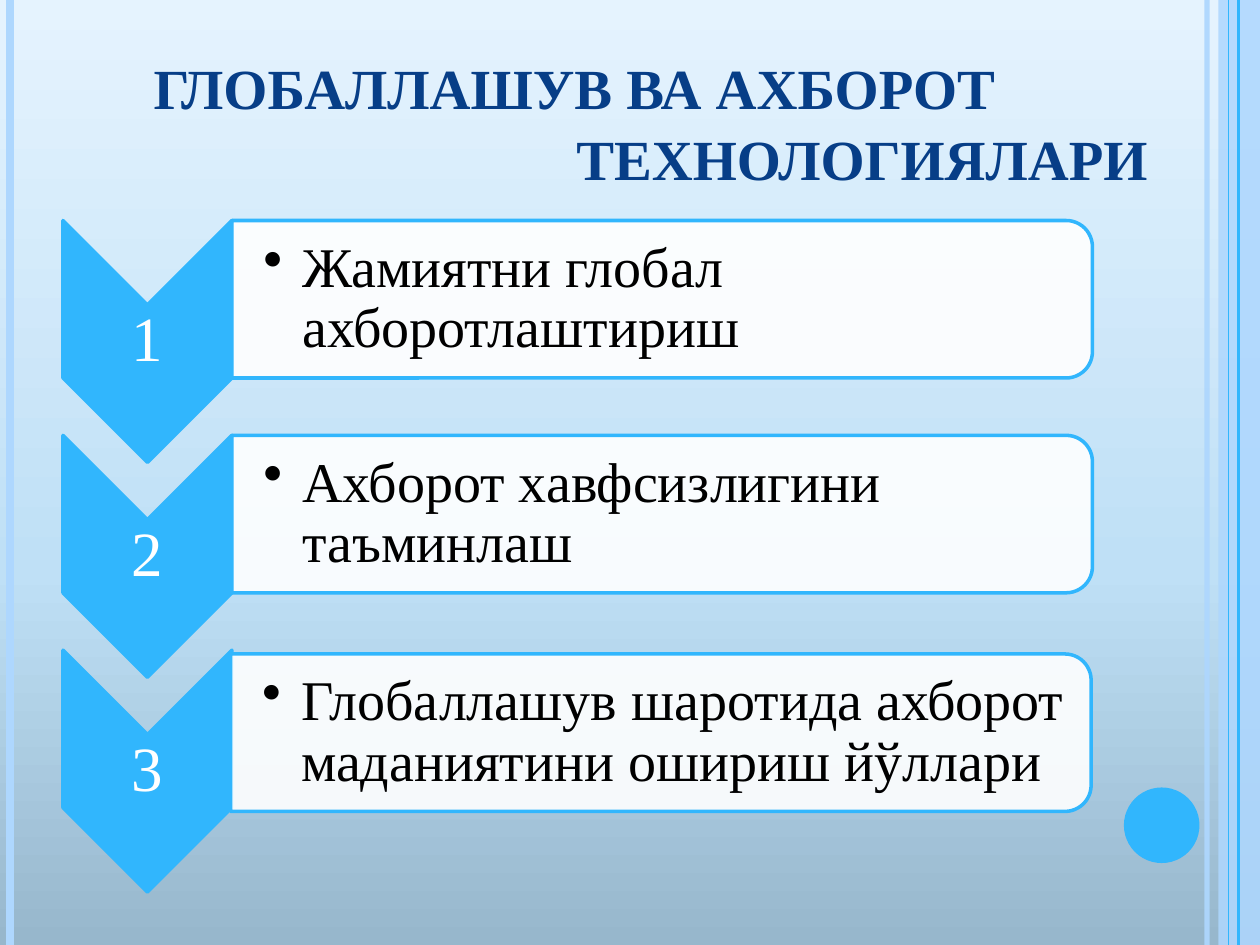
from lxml import etree
from pptx import Presentation
from pptx.dml.color import RGBColor
from pptx.enum.shapes import MSO_CONNECTOR, MSO_SHAPE
from pptx.enum.text import MSO_ANCHOR, PP_ALIGN
from pptx.oxml import parse_xml
from pptx.oxml.ns import nsdecls, qn
from pptx.util import Inches, Pt

CHEVRON, PANEL = MSO_SHAPE.CHEVRON, MSO_SHAPE.ROUND_2_SAME_RECTANGLE
RECTANGLE, OVAL = MSO_SHAPE.RECTANGLE, MSO_SHAPE.OVAL
LEFT, CENTER, RIGHT = PP_ALIGN.LEFT, PP_ALIGN.CENTER, PP_ALIGN.RIGHT
MIDDLE, BOTTOM = MSO_ANCHOR.MIDDLE, MSO_ANCHOR.BOTTOM

# Content
TITLE = [("ГЛОБАЛЛАШУВ ВА АХБОРОТ", LEFT), ("ТЕХНОЛОГИЯЛАРИ", RIGHT)]
TITLE_INDENT = 0.62
# text, panel shift right, panel shift down
ITEMS = [
    ("Жамиятни глобал ахборотлаштириш", 0, 0),
    ("Ахборот хавфсизлигини таъминлаш", 0, 0),
    ("Глобаллашув шаротида ахборот маданиятини ошириш йўллари", -0.01, 0.03),
]

# Look
FONT = "Times New Roman"
BLUE, PALE, NAVY, WHITE, BLACK = "31B6FD", "AED7FE", "073E87", "FFFFFF", "000000"
BACKGROUND = [(0, "97B7CC"), (40, "BFE0F6"), (100, "E5F3FE")]
# x, colour, width in points, opacity
RULES = [(9.58, PALE, 3, 93), (0.08, PALE, 4.5, 100),
         (9.83, BLUE, 1.5, 100), (9.75, BLUE, 0.75, 100)]

# Grid of the list, in inches
WIDTH, HEIGHT = 10, 7.5
LIST_LEFT, LIST_TOP, ROW_STEP = 0.5, 1.75, 1.705
CHEVRON_W, CHEVRON_H = 1.34, 1.92
PANEL_W, PANEL_H = 6.83, 1.25
LABEL_H, TEXT_W, TEXT_H = 0.57, 6.77, 1.12


def rgb(color):
    return RGBColor.from_string(color)


def set_opacity(fill_parent, percent):
    if percent < 100:
        color = fill_parent.find(".//" + qn("a:srgbClr"))
        etree.SubElement(color, qn("a:alpha"), val=str(percent * 1000))


def add_block(slide, kind, left, top, width, height, fill, line=None, opacity=100, turned=False):
    """Add a shape that covers the given box, turned by 90 degrees if asked."""
    if turned:
        left, top = left + (width - height) / 2, top + (height - width) / 2
        width, height = height, width
    block = slide.shapes.add_shape(kind, *map(Inches, (left, top, width, height)))
    block.shadow.inherit = False
    block.rotation = 90 if turned else 0
    block.fill.solid()
    block.fill.fore_color.rgb = rgb(fill)
    set_opacity(block._element.spPr, opacity)
    if line:
        block.line.color.rgb = rgb(line)
        block.line.width = Pt(2)
    else:
        block.line.fill.background()
    return block


def add_rule(slide, x, color, width, opacity):
    rule = slide.shapes.add_connector(
        MSO_CONNECTOR.STRAIGHT, Inches(x), 0, Inches(x), Inches(HEIGHT))
    rule.line.color.rgb = rgb(color)
    rule.line.width = Pt(width)
    properties = rule._element.spPr
    set_opacity(properties, opacity)
    etree.SubElement(properties, qn("a:effectLst"))


def set_frame(frame, anchor, insets):
    frame.word_wrap = True
    frame.vertical_anchor = anchor
    (frame.margin_left, frame.margin_top,
     frame.margin_right, frame.margin_bottom) = map(Inches, insets)


def style(paragraph, size, color, align, spacing, bold=False):
    paragraph.alignment = align
    paragraph.line_spacing = spacing
    font = paragraph.font
    font.name, font.size, font.bold = FONT, Pt(size), bold
    font.color.rgb = rgb(color)


def add_text(slide, text, box, insets, size, color, align):
    frame = slide.shapes.add_textbox(*map(Inches, box)).text_frame
    set_frame(frame, MIDDLE, insets)
    paragraph = frame.paragraphs[0]
    paragraph.text = text
    style(paragraph, size, color, align, 0.9)
    return paragraph


def set_indent(paragraph, margin, first=0):
    properties = paragraph._p.get_or_add_pPr()
    properties.set("marL", str(Inches(margin)))
    properties.set("indent", str(Inches(first)))
    return properties


def set_background(slide):
    slide.background.fill.solid()
    stops = "".join(f'<a:gs pos="{pos * 1000}"><a:srgbClr val="{color}"/></a:gs>'
                    for pos, color in BACKGROUND)
    gradient = parse_xml(f'<a:gradFill {nsdecls("a")} rotWithShape="1"><a:gsLst>{stops}</a:gsLst>'
                         '<a:lin ang="16200000" scaled="0"/></a:gradFill>')
    solid = slide._element.find(".//" + qn("p:bgPr")).find(qn("a:solidFill"))
    solid.getparent().replace(solid, gradient)


def add_title(slide):
    title = slide.shapes.title
    title.left, title.top, title.width, title.height = map(Inches, (0.5, 0.3, 8.71, 1.25))
    frame = title.text_frame
    set_frame(frame, BOTTOM, (0.1, 0.05, 0.1, 0.03))
    frame.text = "\n".join(text for text, _ in TITLE)
    for paragraph, (_, align) in zip(frame.paragraphs, TITLE):
        style(paragraph, 32.4, NAVY, align, 1.04, bold=True)
        set_indent(paragraph, TITLE_INDENT if align == LEFT else 0)


def add_item(slide, index, text, shift_x, shift_y):
    top = LIST_TOP + index * ROW_STEP
    add_block(slide, CHEVRON, LIST_LEFT, top, CHEVRON_W, CHEVRON_H, BLUE, BLUE, turned=True)
    label_top = top + (CHEVRON_H - LABEL_H) / 2
    add_text(slide, str(index + 1), (LIST_LEFT, label_top, CHEVRON_W, LABEL_H),
             [0.03] * 4, 36, WHITE, CENTER)

    left, top = LIST_LEFT + CHEVRON_W + shift_x, top + shift_y
    add_block(slide, PANEL, left, top, PANEL_W, PANEL_H, WHITE, BLUE, opacity=90, turned=True)
    text_top = top + (PANEL_H - TEXT_H) / 2
    entry = add_text(slide, text, (left, text_top, TEXT_W, TEXT_H),
                     (0.25, 0.02, 0.02, 0.02), 32, BLACK, LEFT)
    bullet = etree.Element(qn("a:buChar"), char="•")
    properties = set_indent(entry, 0.31, -0.31)
    properties.insert(list(properties).index(properties.find(qn("a:defRPr"))), bullet)


def main():
    deck = Presentation()
    deck.slide_width, deck.slide_height = Inches(WIDTH), Inches(HEIGHT)
    slide = deck.slides.add_slide(deck.slide_layouts[5])
    set_background(slide)

    # Side decoration
    add_block(slide, RECTANGLE, 9.67, 0, 0.33, HEIGHT, PALE, opacity=87)
    for rule in RULES:
        add_rule(slide, *rule)
    add_block(slide, OVAL, 8.92, 6.25, 0.6, 0.6, BLUE)

    # Title and numbered list
    add_title(slide)
    for index, item in enumerate(ITEMS):
        add_item(slide, index, *item)
    deck.save("out.pptx")


if __name__ == "__main__":
    main()
